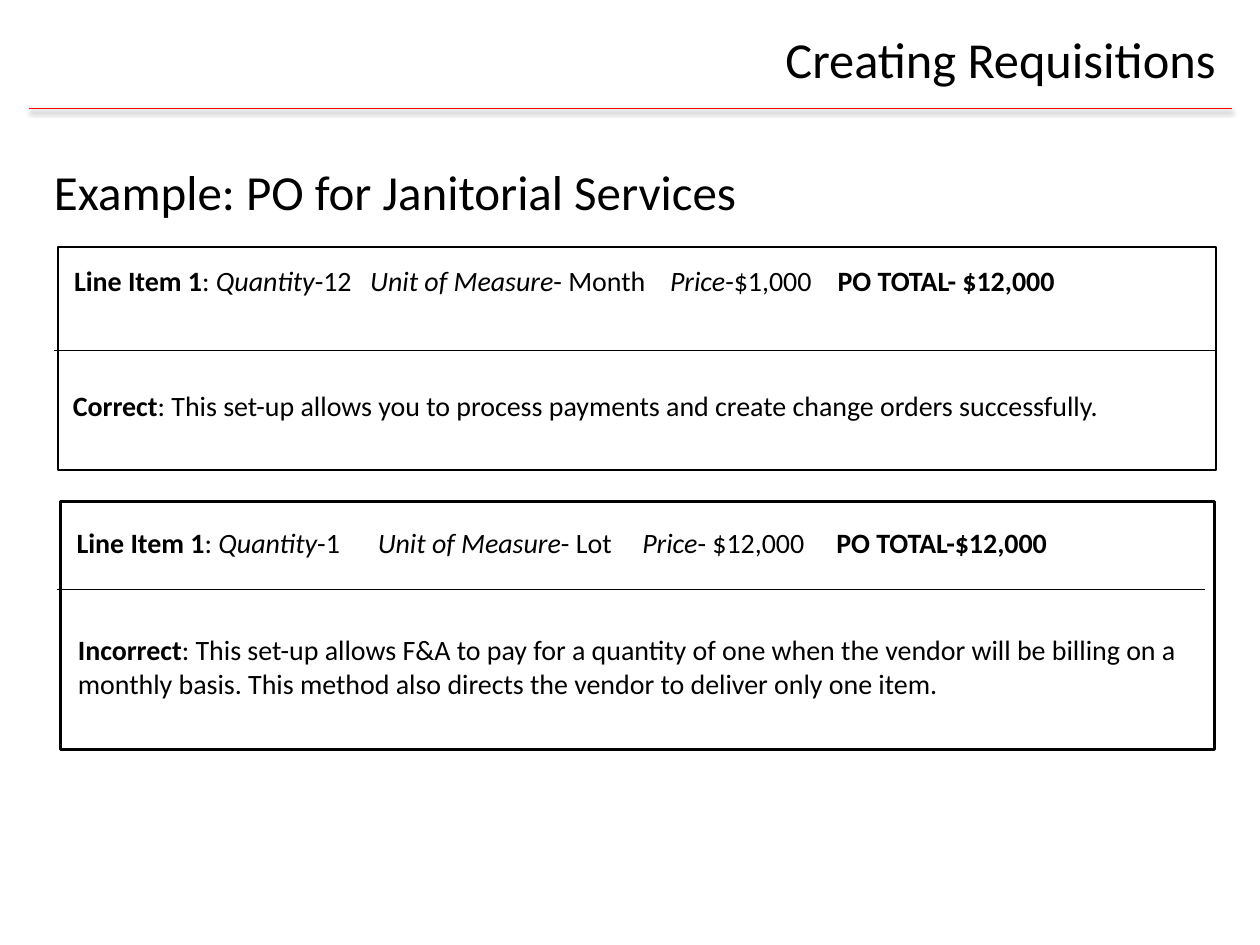
"""Build a slide that compares a correct and an incorrect requisition set-up."""
from lxml.etree import SubElement
from pptx import Presentation
from pptx.dml.color import RGBColor
from pptx.enum.shapes import MSO_CONNECTOR, MSO_SHAPE
from pptx.enum.text import MSO_ANCHOR, MSO_AUTO_SIZE, PP_ALIGN
from pptx.oxml.ns import qn
from pptx.util import Inches, Pt

BLACK, RED = "000000", "FF0000"


def color(value):
    return RGBColor.from_string(value)


def add_span(para, text, size=16, bold=False, italic=False, font="Calibri", ink=BLACK):
    span = para.add_run()
    span.text = text
    span.font.name = font
    span.font.size = Pt(size)
    span.font.bold = bold
    span.font.italic = italic
    span.font.color.rgb = color(ink)


class RequisitionSlide:
    def __init__(self, deck):
        self.page = deck.slides.add_slide(deck.slide_layouts[5])

    def title(self, text, left, top, width, height):
        box = self.page.shapes.title
        box.left, box.top = Inches(left), Inches(top)
        box.width, box.height = Inches(width), Inches(height)
        frame = box.text_frame
        frame.word_wrap = True
        frame.auto_size = MSO_AUTO_SIZE.NONE
        frame.vertical_anchor = MSO_ANCHOR.TOP
        para = frame.paragraphs[0]
        para.alignment = PP_ALIGN.RIGHT
        add_span(para, text, size=28.8)

    def frame(self, left, top, width, height):
        box = self.page.shapes.add_shape(
            MSO_SHAPE.RECTANGLE, Inches(left), Inches(top), Inches(width), Inches(height))
        box.shadow.inherit = False
        box.fill.background()
        box.line.color.rgb = color(BLACK)
        box.line.width = Pt(1.5)

    def rule(self, left, right, y, ink=BLACK, shadow=False):
        line = self.page.shapes.add_connector(
            MSO_CONNECTOR.STRAIGHT, Inches(left), Inches(y), Inches(right), Inches(y))
        line.line.color.rgb = color(ink)
        line.line.width = Pt(0.75)
        effects = SubElement(line._element.spPr, qn("a:effectLst"))
        if shadow:
            outer = SubElement(effects, qn("a:outerShdw"), blurRad=str(Pt(3.1)),
                               dist=str(Pt(1.6)), dir="5400000", rotWithShape="0")
            shade = SubElement(outer, qn("a:srgbClr"), val=BLACK)
            SubElement(shade, qn("a:alpha"), val="38000")

    def text(self, spans, left, top, width, height, size=16, tabs=()):
        box = self.page.shapes.add_textbox(
            Inches(left), Inches(top), Inches(width), Inches(height))
        frame = box.text_frame
        frame.word_wrap = True
        frame.vertical_anchor = MSO_ANCHOR.MIDDLE
        para = frame.paragraphs[0]
        if tabs:
            stops = SubElement(para._p.get_or_add_pPr(), qn("a:tabLst"))
            for stop in tabs:
                SubElement(stops, qn("a:tab"), pos=str(Inches(stop)), algn="l")
        for text, style in spans:
            add_span(para, text, size=size, bold=style == "bold", italic=style == "italic")

    def line_item(self, quantity, unit, price, total, left, top, width, tabs):
        spans = [
            ("Line Item 1", "bold"), (": ", ""),
            ("Quantity", "italic"), (f"-{quantity}\t", ""),
            ("Unit of Measure", "italic"), (f"- {unit}\t", ""),
            ("Price", "italic"), (f"-{price}\t", ""),
            (f"PO TOTAL-{total}", "bold"),
        ]
        self.text(spans, left, top, width, 0.37, tabs=tabs)

    def verdict(self, label, reason, left, top, width, height):
        self.text([(label, "bold"), (f": {reason}", "")], left, top, width, height)


def main():
    deck = Presentation()
    deck.slide_width, deck.slide_height = Inches(10), Inches(7.5)
    slide = RequisitionSlide(deck)

    slide.rule(0.23, 9.78, 0.86, ink=RED, shadow=True)
    slide.title("Creating Requisitions", 2.17, 0.17, 7.58, 0.67)
    slide.text([("Example: PO for Janitorial Services", "")], 0.33, 1.23, 7.74, 0.57, size=28)

    slide.frame(0.46, 1.96, 9.19, 1.77)
    slide.line_item("12", "Month", "$1,000", " $12,000", 0.49, 2.04, 9.16, (2.35, 4.73, 6.06))
    slide.rule(0.43, 9.66, 2.78)
    slide.verdict(
        "Correct",
        "This set-up allows you to process payments and create change orders successfully.",
        0.48, 3.03, 9.18, 0.37)

    slide.frame(0.48, 3.98, 9.16, 1.97)
    slide.line_item("1", "Lot", " $12,000", "$12,000", 0.51, 4.12, 9.07, (2.39, 4.49, 6.03))
    slide.rule(0.45, 9.56, 4.68)
    slide.verdict(
        "Incorrect",
        "This set-up allows F&A to pay for a quantity of one when the vendor will be billing "
        "on a monthly basis. This method also directs the vendor to deliver only one item.",
        0.52, 4.97, 9.04, 0.64)

    deck.save("out.pptx")


if __name__ == "__main__":
    main()
